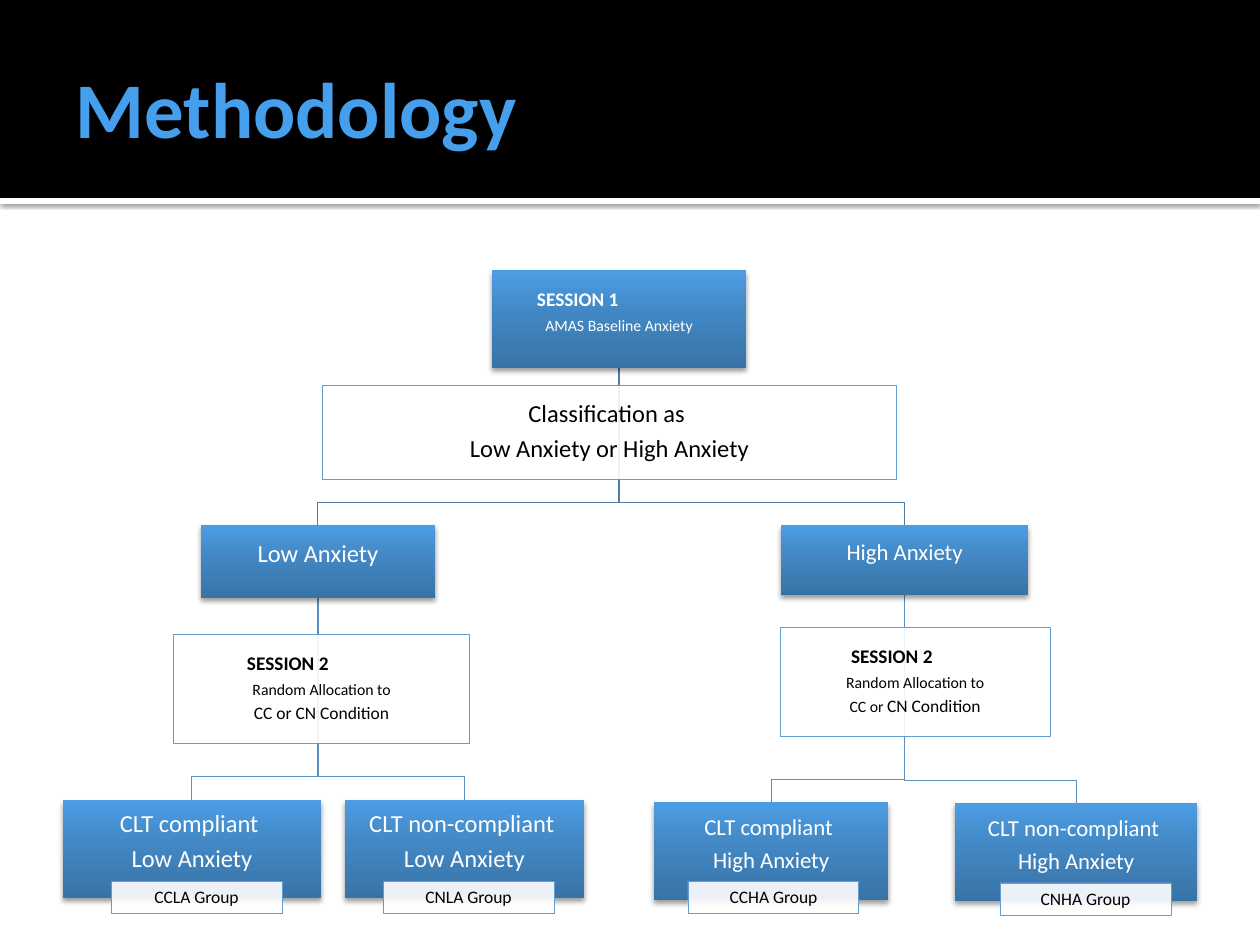
from copy import deepcopy

from lxml.etree import SubElement
from pptx import Presentation
from pptx.dml.color import RGBColor
from pptx.enum.shapes import MSO_SHAPE
from pptx.enum.text import MSO_ANCHOR, PP_ALIGN
from pptx.oxml.ns import qn
from pptx.util import Pt

PX = 914400 / 126
FONT = "Calibri"
COLORS = {
    "black": "000000",
    "white": "FFFFFF",
    "title": "469FED",
    "card_bottom": "3873A6",
    "card_middle": "4287C3",
    "card_top": "4D9DE4",
    "outline": "629DD1",
    "upper_branch": "4E7EA7",
    "lower_branch": "598EBE",
}
BRANCH_DROP = 23
TAG_SIZE = (171, 33)

CARDS = {
    "baseline": (492, 270, 254, 98),
    "low": (201, 525, 234, 73),
    "high": (781, 525, 247, 70),
    "low_compliant": (63, 800, 258, 98),
    "low_non_compliant": (345, 800, 239, 98),
    "high_compliant": (654, 802, 234, 98),
    "high_non_compliant": (955, 803, 242, 98),
}
BRANCHES = [
    ("high", "high_non_compliant", "lower_branch"),
    ("high", "high_compliant", "lower_branch"),
    ("baseline", "high", "upper_branch"),
    ("low", "low_non_compliant", "lower_branch"),
    ("low", "low_compliant", "lower_branch"),
    ("baseline", "low", "upper_branch"),
]


def emu(px):
    return round(px * PX)


def color(name):
    return RGBColor.from_string(COLORS[name])


def line(text, size, bold=False, indent=None):
    return [(text, size)], bold, indent


class Painter:
    def __init__(self, page):
        self.shapes = page.shapes

    def rectangle(self, rect):
        box = self.shapes.add_shape(MSO_SHAPE.RECTANGLE, *map(emu, rect))
        box.shadow.inherit = False
        box.line.fill.background()
        return box

    def band(self, rect, fill):
        box = self.rectangle(rect)
        box.fill.solid()
        box.fill.fore_color.rgb = color(fill)
        return box

    def cast_shadow(self, box, alpha, blur, distance):
        effects = box._element.spPr.find(qn("a:effectLst"))
        shadow = SubElement(effects, qn("a:outerShdw"), blurRad=str(Pt(blur)),
                            dist=str(Pt(distance)), dir="5400000", rotWithShape="0")
        tint = SubElement(shadow, qn("a:srgbClr"), val=COLORS["black"])
        SubElement(tint, qn("a:alpha"), val=str(alpha * 1000))

    def lettering(self, box, lines, ink, insets):
        frame = box.text_frame
        frame.word_wrap = True
        frame.vertical_anchor = MSO_ANCHOR.MIDDLE
        (frame.margin_left, frame.margin_top,
         frame.margin_right, frame.margin_bottom) = map(emu, insets)
        for number, (spans, bold, indent) in enumerate(lines):
            para = frame.add_paragraph() if number else frame.paragraphs[0]
            para.alignment = PP_ALIGN.CENTER if indent is None else PP_ALIGN.LEFT
            if indent:
                para._p.get_or_add_pPr().set("marL", str(emu(indent)))
            para.font.name = FONT
            para.font.bold = bold
            para.font.color.rgb = color(ink)
            para.line_spacing = 0.9
            para.space_after = Pt(0.35 * spans[-1][1])
            if len(spans) == 1:
                para.font.size = Pt(spans[0][1])
            for text, size in spans:
                span = para.add_run()
                span.text = text
                if len(spans) > 1:
                    span.font.size = Pt(size)

    def title(self, rect, text, size):
        box = self.shapes.add_textbox(*map(emu, rect))
        self.lettering(box, [line(text, size, True, 0)], "title", (13, 6, 6, 6))
        para = box.text_frame.paragraphs[0]
        para.line_spacing = 1.0
        para.space_after = Pt(0)

    def card(self, rect, lines):
        box = self.rectangle(rect)
        box.fill.gradient()
        box.fill.gradient_angle = 90
        first, last = box.fill.gradient_stops
        first.position, last.position = 0, 1
        first.color.rgb = color("card_bottom")
        last.color.rgb = color("card_top")
        stops = box._element.spPr.find(qn("a:gradFill")).find(qn("a:gsLst"))
        stops.insert(1, deepcopy(stops[0]))
        middle = box.fill.gradient_stops[1]
        middle.position = 0.55
        middle.color.rgb = color("card_middle")
        self.cast_shadow(box, 38, 3.1, 2)
        self.lettering(box, lines, "white", (1, 1, 1, 14))

    def note(self, rect, lines):
        box = self.band(rect, "white")
        tint = box._element.spPr.find(qn("a:solidFill"))[0]
        SubElement(tint, qn("a:alpha"), val="90000")
        box.line.color.rgb = color("outline")
        box.line.width = Pt(0.5)
        self.lettering(box, lines, "black", (4, 1, 4, 1))

    def branch(self, parent, child, stroke):
        left, top, width, height = parent
        start_x, start_y = left + width / 2, top + height
        end_x, end_y = child[0] + child[2] / 2, child[1]
        bend = end_y - BRANCH_DROP
        outline = self.shapes.build_freeform(start_x, start_y, scale=PX)
        outline.add_line_segments(
            [(start_x, bend), (end_x, bend), (end_x, end_y)], close=False)
        elbow = outline.convert_to_shape()
        elbow.shadow.inherit = False
        elbow.fill.background()
        elbow.line.color.rgb = color(stroke)
        elbow.line.width = Pt(0.5)


def main():
    deck = Presentation()
    deck.slide_width, deck.slide_height = emu(1260), emu(945)
    page = deck.slides.add_slide(deck.slide_layouts[6])
    painter = Painter(page)

    rule = painter.band((0, 198, 1260, 6), "white")
    painter.cast_shadow(rule, 60, 2.5, 0.8)
    painter.band((0, 0, 1260, 198), "black")
    painter.title((63, 21, 1134, 173), "Methodology", 45)

    for parent, child, stroke in BRANCHES:
        painter.branch(CARDS[parent], CARDS[child], stroke)

    painter.card(CARDS["baseline"], [
        line("SESSION 1", 11, True, 44), line("AMAS Baseline Anxiety", 9)])
    painter.note((322, 385, 575, 94), [
        line("Classification as ", 14), line("Low Anxiety or High Anxiety", 14)])
    painter.card(CARDS["low"], [line("Low Anxiety", 14)])
    painter.card(CARDS["high"], [line("High Anxiety", 13)])

    allocations = [
        ((173, 634, 297, 109), 70, [("CC or CN Condition", 10)]),
        ((780, 627, 270, 109), 67, [("CC or ", 9), ("CN Condition", 10)]),
    ]
    for rect, indent, condition in allocations:
        painter.note(rect, [
            line("SESSION 2", 11, True, indent),
            line("Random Allocation to", 9),
            (condition, False, None)])

    groups = [
        ("low_compliant", "CLT compliant ", "Low Anxiety", 14, "CCLA Group", (111, 881)),
        ("low_non_compliant", "CLT non-compliant ", "Low Anxiety", 14, "CNLA Group", (383, 881)),
        ("high_compliant", "CLT compliant ", "High Anxiety", 13, "CCHA Group", (688, 881)),
        ("high_non_compliant", "CLT non-compliant ", "High Anxiety", 13, "CNHA Group", (1000, 883)),
    ]
    for key, teaching, anxiety, size, tag, corner in groups:
        painter.card(CARDS[key], [line(teaching, size), line(anxiety, size)])
        painter.note(corner + TAG_SIZE, [line(tag, 10)])

    deck.save("out.pptx")


if __name__ == "__main__":
    main()
